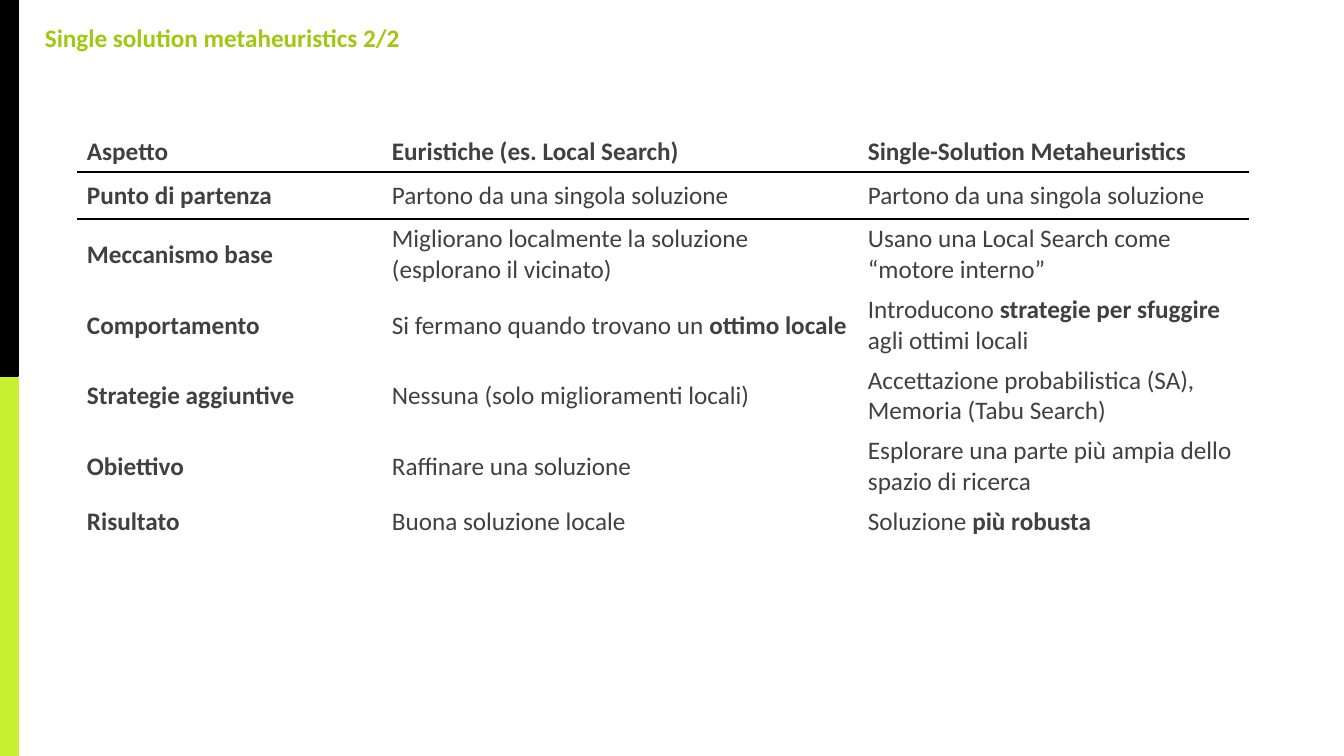
from dataclasses import dataclass

from lxml.etree import SubElement
from pptx import Presentation
from pptx.dml.color import RGBColor
from pptx.enum.shapes import MSO_SHAPE
from pptx.enum.text import MSO_ANCHOR, MSO_AUTO_SIZE
from pptx.oxml.ns import qn
from pptx.util import Emu, Pt


@dataclass(frozen=True)
class Theme:
    font: str = "Calibri"
    size: int = 18
    title: str = "A0C80E"
    body: str = "404040"
    black: str = "000000"
    lime: str = "C7F030"
    bar_line: float = 1.5
    rule_line: float = 1
    plain_table: str = "{2D5ABB26-0587-4C30-8999-92F81FD0307C}"


THEME = Theme()

COLUMN_WIDTHS = [305, 476, 391]
ROW_HEIGHTS = [40, 47, 71, 71, 70, 71, 40]

# Text between ** marks is bold
COMPARISON = [
    ["**Aspetto**", "**Euristiche (es. Local Search)**",
     "**Single-Solution Metaheuristics**"],
    ["**Punto di partenza**", "Partono da una singola soluzione",
     "Partono da una singola soluzione"],
    ["**Meccanismo base**",
     "Migliorano localmente la soluzione (esplorano il vicinato)",
     "Usano una Local Search come “motore interno”"],
    ["**Comportamento**", "Si fermano quando trovano un **ottimo locale**",
     "Introducono **strategie per sfuggire** agli ottimi locali"],
    ["**Strategie aggiuntive**", "Nessuna (solo miglioramenti locali)",
     "Accettazione probabilistica (SA), Memoria (Tabu Search)"],
    ["**Obiettivo**", "Raffinare una soluzione",
     "Esplorare una parte più ampia dello spazio di ricerca"],
    ["**Risultato**", "Buona soluzione locale", "Soluzione **più robusta**"],
]


def px(length):
    return Emu(round(length * 914400 / 100.8))


def write(paragraph, marked_text, color):
    for index, part in enumerate(marked_text.split("**")):
        if part:
            run = paragraph.add_run()
            run.text = part
            run.font.name = THEME.font
            run.font.size = Pt(THEME.size)
            run.font.bold = index % 2 == 1
            run.font.color.rgb = RGBColor.from_string(color)


def add_title(slide, text, left, top, width, height):
    title = slide.shapes.add_textbox(px(left), px(top), px(width), px(height))
    title.text_frame.word_wrap = True
    title.text_frame.auto_size = MSO_AUTO_SIZE.SHAPE_TO_FIT_TEXT
    write(title.text_frame.paragraphs[0], text, THEME.title)


def add_bar(slide, color, top, height):
    bar = slide.shapes.add_shape(
        MSO_SHAPE.RECTANGLE, px(0), px(top), px(18), px(height))
    bar.shadow.inherit = False
    bar.fill.solid()
    bar.fill.fore_color.rgb = RGBColor.from_string(color)
    bar.line.color.rgb = RGBColor.from_string(color)
    bar.line.width = Pt(THEME.bar_line)


def add_rule(cell, side):
    rule = SubElement(cell._tc.get_or_add_tcPr(), qn(f"a:{side}"),
                      w=str(Pt(THEME.rule_line)))
    fill = SubElement(rule, qn("a:solidFill"))
    SubElement(fill, qn("a:srgbClr"), val=THEME.black)


def add_comparison(slide, left, top):
    table = slide.shapes.add_table(
        len(ROW_HEIGHTS), len(COLUMN_WIDTHS), px(left), px(top),
        px(sum(COLUMN_WIDTHS)), px(sum(ROW_HEIGHTS))).table
    table.horz_banding = False
    table._tbl.tblPr.find(qn("a:tableStyleId")).text = THEME.plain_table
    for column, width in zip(table.columns, COLUMN_WIDTHS):
        column.width = px(width)

    # A single rule separates the headings from the rows below
    rule_sides = {0: "lnB", 1: "lnT"}
    for row_index, texts in enumerate(COMPARISON):
        table.rows[row_index].height = px(ROW_HEIGHTS[row_index])
        for column_index, text in enumerate(texts):
            cell = table.cell(row_index, column_index)
            cell.vertical_anchor = MSO_ANCHOR.MIDDLE
            cell.margin_left = cell.margin_right = px(10)
            cell.margin_top = cell.margin_bottom = px(4)
            if row_index in rule_sides:
                add_rule(cell, rule_sides[row_index])
            cell.fill.background()
            write(cell.text_frame.paragraphs[0], text, THEME.body)


def main():
    deck = Presentation()
    deck.slide_width, deck.slide_height = px(1344), px(756)
    slide = deck.slides.add_slide(deck.slide_layouts[6])

    # Heading
    add_title(slide, "**Single solution metaheuristics 2/2**", 35, 17, 873, 40)

    # Side bars
    add_bar(slide, THEME.lime, 378, 378)
    add_bar(slide, THEME.black, 0, 376)

    # Comparison table
    add_comparison(slide, 77, 132)

    deck.save("out.pptx")


if __name__ == "__main__":
    main()
